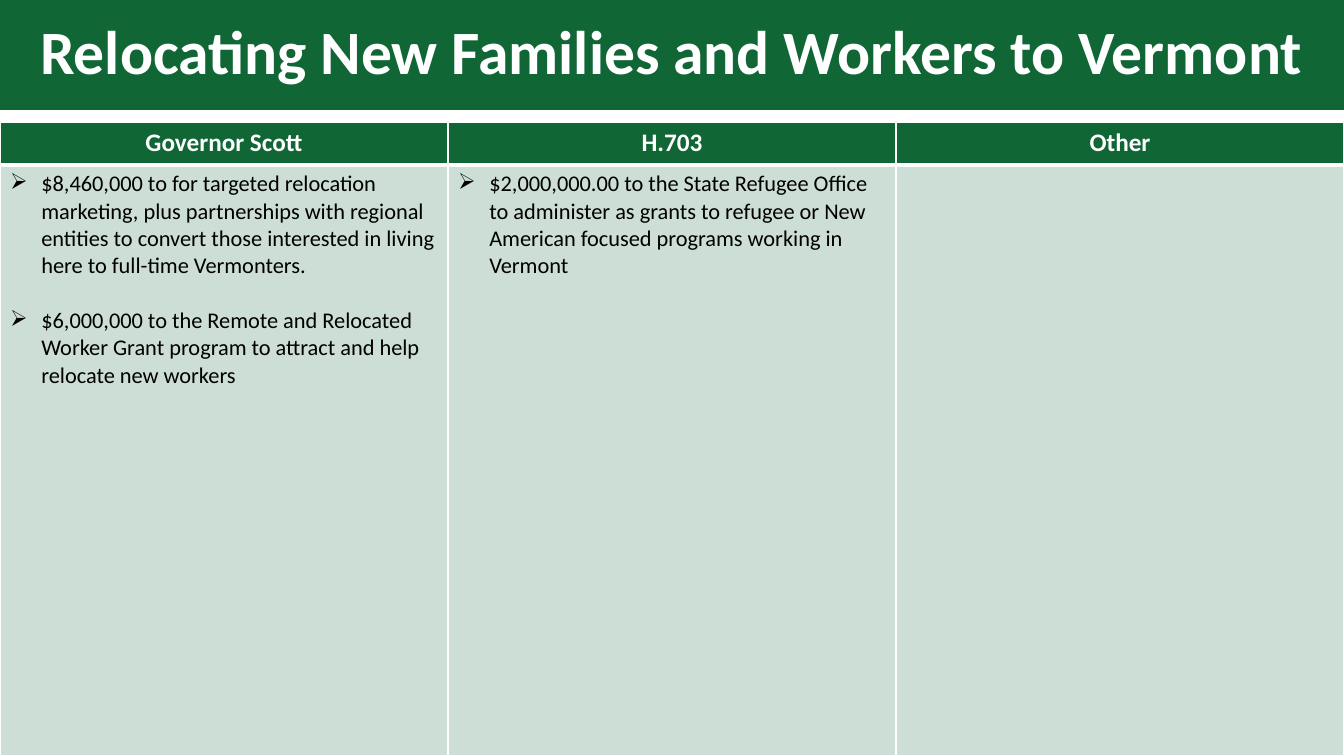
from lxml import etree
from pptx import Presentation
from pptx.dml.color import RGBColor
from pptx.enum.text import MSO_ANCHOR, MSO_AUTO_SIZE, PP_ALIGN
from pptx.oxml.ns import qn
from pptx.util import Inches, Pt

CENTER, LEFT = PP_ALIGN.CENTER, PP_ALIGN.LEFT
MIDDLE = MSO_ANCHOR.MIDDLE
NO_AUTOFIT = MSO_AUTO_SIZE.NONE

COLORS = {"green": "106635", "mint": "CDDED6", "white": "FFFFFF", "black": "000000"}
FORMATS = {
    "title": {"size": Pt(44), "bold": True, "color": "white"},
    "header": {"size": Pt(18), "bold": True, "color": "white"},
    "body": {"size": Pt(16), "bold": False, "color": "black"},
}
HEADER_BORDERS = {"L": 1, "R": 1, "T": 1, "B": 3}
BODY_BORDERS = {"L": 1, "R": 1, "T": 3, "B": 1}

WIDTH, HEIGHT = 13.33, 7.5
TITLE_HEIGHT = 1.09
TABLE_TOP, HEADER_HEIGHT = 1.21, 0.43
BULLET_INDENT = 0.31

COLUMNS = {
    "Governor Scott": [
        "$8,460,000 to for targeted relocation marketing, plus partnerships with "
        "regional entities to convert those interested in living here to full-time "
        "Vermonters.",
        "$6,000,000 to the Remote and Relocated Worker Grant program to attract "
        "and help relocate new workers",
    ],
    "H.703": [
        "$2,000,000.00 to the State Refugee Office to administer as grants to "
        "refugee or New American focused programs working in Vermont",
    ],
    "Other": [],
}


class SlideBuilder:
    def __init__(self, prs, font):
        self.s = prs.slides.add_slide(prs.slide_layouts[5])
        self.font = font

    def rgb(self, name):
        return RGBColor.from_string(COLORS[name])

    def fill(self, target, color):
        target.fill.solid()
        target.fill.fore_color.rgb = self.rgb(color)

    def add_text(self, p, text, style, align):
        p.alignment = align
        r = p.add_run()
        r.text = text
        r.font.name = self.font
        for name, value in FORMATS[style].items():
            if name == "color":
                r.font.color.rgb = self.rgb(value)
            else:
                setattr(r.font, name, value)

    def title(self, text):
        sp = self.s.shapes.title
        box = {"left": 0, "top": 0, "width": Inches(WIDTH), "height": Inches(TITLE_HEIGHT)}
        for name, value in box.items():
            setattr(sp, name, value)
        self.fill(sp, "green")
        tf = sp.text_frame
        tf.word_wrap = True
        tf.auto_size = NO_AUTOFIT
        tf.vertical_anchor = MIDDLE
        p = tf.paragraphs[0]
        p.line_spacing = 0.9
        self.add_text(p, text, "title", CENTER)

    def bullet(self, p):
        pPr = p._p.get_or_add_pPr()
        pPr.set("marL", str(Inches(BULLET_INDENT)))
        pPr.set("indent", str(-Inches(BULLET_INDENT)))
        etree.SubElement(pPr, qn("a:buChar"), char="➢")

    def borders(self, cell, widths):
        """Draw white cell edges; widths maps an edge letter to points."""
        tcPr = cell._tc.get_or_add_tcPr()
        for edge, points in widths.items():
            ln = etree.SubElement(tcPr, qn(f"a:ln{edge}"), w=str(Pt(points)))
            solid = etree.SubElement(ln, qn("a:solidFill"))
            etree.SubElement(solid, qn("a:srgbClr"), val=COLORS["white"])

    def table(self, columns):
        height = HEIGHT - TABLE_TOP
        table = self.s.shapes.add_table(
            2, len(columns), 0, Inches(TABLE_TOP), Inches(WIDTH), Inches(height)
        ).table
        table.rows[0].height = Inches(HEADER_HEIGHT)
        table.rows[1].height = Inches(height - HEADER_HEIGHT)
        for i, (heading, items) in enumerate(columns.items()):
            table.columns[i].width = Inches(WIDTH / len(columns))
            header, body = table.cell(0, i), table.cell(1, i)
            self.borders(header, HEADER_BORDERS)
            self.fill(header, "green")
            self.add_text(header.text_frame.paragraphs[0], heading, "header", CENTER)
            self.borders(body, BODY_BORDERS)
            self.fill(body, "mint")
            self.bullets(body.text_frame, items)

    def bullets(self, tf, items):
        for i, text in enumerate(items):
            p = tf.add_paragraph() if i else tf.paragraphs[0]
            self.bullet(p)
            if i:
                p.space_before = Pt(19.5)
            self.add_text(p, text, "body", LEFT)


def main():
    prs = Presentation()
    prs.slide_width, prs.slide_height = Inches(WIDTH), Inches(HEIGHT)
    slide = SlideBuilder(prs, "Calibri")
    slide.title("Relocating New Families and Workers to Vermont")
    slide.table(COLUMNS)
    prs.save("out.pptx")


if __name__ == "__main__":
    main()
